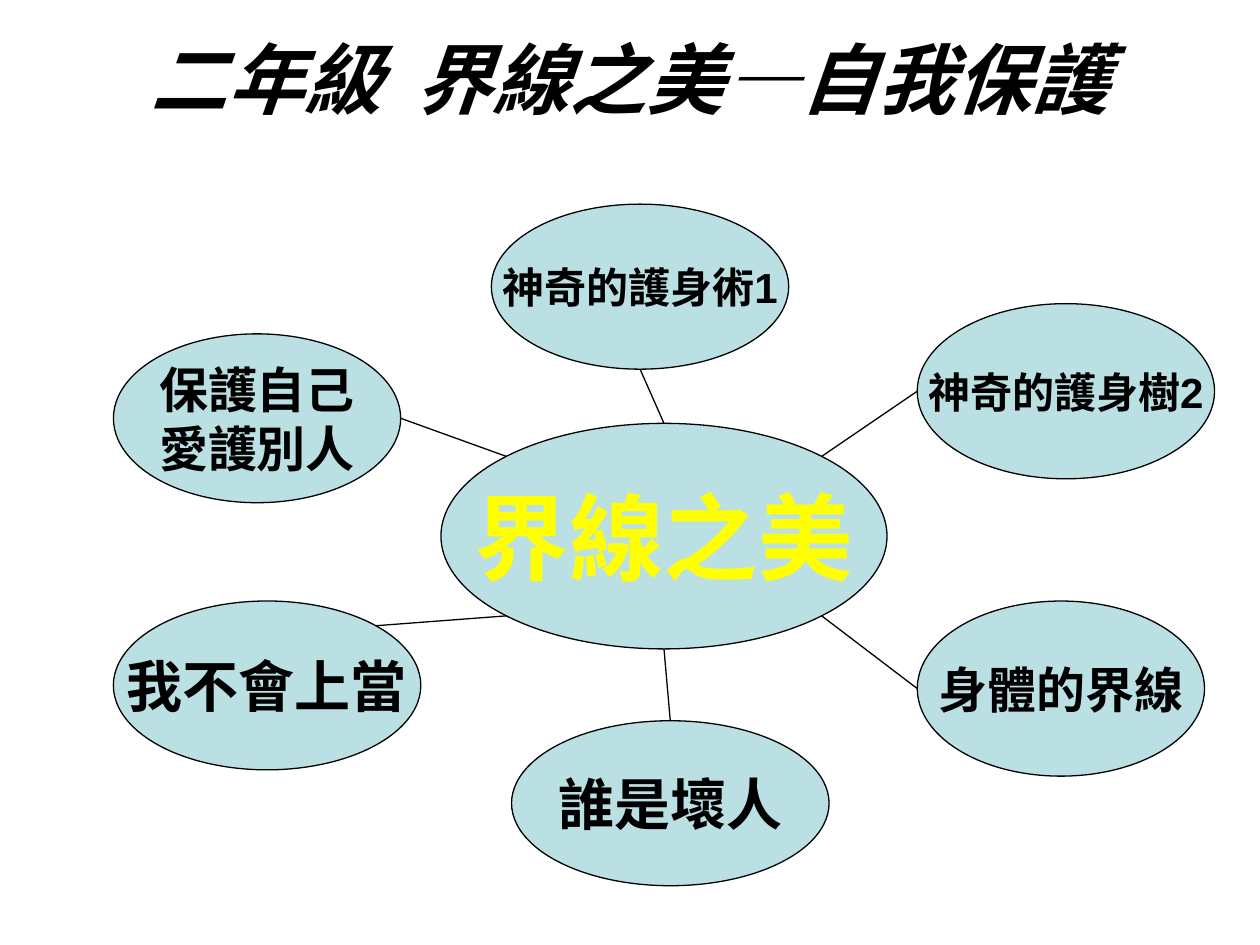
"""Build a mind-map slide: one central topic joined to six lesson bubbles."""
import math

import lxml.etree
import pptx
import pptx.dml.color
import pptx.enum.shapes
import pptx.enum.text
import pptx.oxml.ns
import pptx.util

Inches, Pt = pptx.util.Inches, pptx.util.Pt
RGB = pptx.dml.color.RGBColor.from_string
THEME = {
    "font": "Arial", "fill": RGB("BBE0E3"), "ink": RGB("000000"),
    "accent": RGB("FFFF00"), "line": Pt(0.75),
    "title": Pt(44), "hub": Pt(54), "large": Pt(32), "medium": Pt(28), "small": Pt(24),
}


def write(tf, text, size, color, **extra):
    tf.text = text
    tf.vertical_anchor = pptx.enum.text.MSO_ANCHOR.MIDDLE
    for p in tf.paragraphs:
        p.alignment = pptx.enum.text.PP_ALIGN.CENTER
        for r in p.runs:
            r.font.color.rgb = THEME[color]
            fmt = {"name": THEME["font"], "size": THEME[size], "bold": True, **extra}
            for key, value in fmt.items():
                setattr(r.font, key, value)


def rim(box, degrees):
    x, y, w, h = box
    a = math.radians(degrees)
    return Inches(x + w / 2 * (1 + math.cos(a))), Inches(y + h / 2 * (1 - math.sin(a)))


prs = pptx.Presentation()
prs.slide_width, prs.slide_height = Inches(10), Inches(7.5)
s = prs.slides.add_slide(prs.slide_layouts[5])

title = s.shapes.title
for key, value in {"left": 0.5, "top": 0, "width": 9, "height": 1.23}.items():
    setattr(title, key, Inches(value))
write(title.text_frame, "二年級  界線之美—自我保護", "title", "ink", italic=True)

hub = (3.5, 3.36, 3.54, 1.79)
lessons = [
    ("神奇的護身術1", "small", (3.9, 1.62, 2.36, 1.31), 90, 270),
    ("神奇的護身樹2", "small", (7.28, 2.41, 2.36, 1.39), 45, 180),
    ("身體的界線", "medium", (7.28, 4.77, 2.28, 1.39), 315, 180),
    ("誰是壞人", "large", (4.06, 5.72, 2.52, 1.31), 270, 90),
    ("保護自己\n愛護別人", "medium", (0.9, 2.65, 2.28, 1.34), 135, 0),
    ("我不會上當", "large", (0.9, 4.77, 2.44, 1.34), 225, 45),
]

bubbles = [("界線之美", "hub", hub, "accent")]
bubbles += [(text, size, box, "ink") for text, size, box, *_ in lessons]
for text, size, box, color in bubbles:
    sp = s.shapes.add_shape(pptx.enum.shapes.MSO_SHAPE.OVAL, *map(Inches, box))
    sp.shadow.inherit = False
    sp.fill.solid()
    sp.fill.fore_color.rgb = THEME["fill"]
    sp.line.color.rgb = THEME["ink"]
    sp.line.width = THEME["line"]
    sp.text_frame.word_wrap = False
    write(sp.text_frame, text, size, color)

for _, _, box, hub_angle, lesson_angle in lessons:
    cxn = s.shapes.add_connector(
        pptx.enum.shapes.MSO_CONNECTOR.STRAIGHT, *rim(box, lesson_angle), *rim(hub, hub_angle))
    cxn.line.color.rgb = THEME["ink"]
    cxn.line.width = THEME["line"]
    lxml.etree.SubElement(cxn.element.spPr, pptx.oxml.ns.qn("a:effectLst"))

prs.save("out.pptx")
